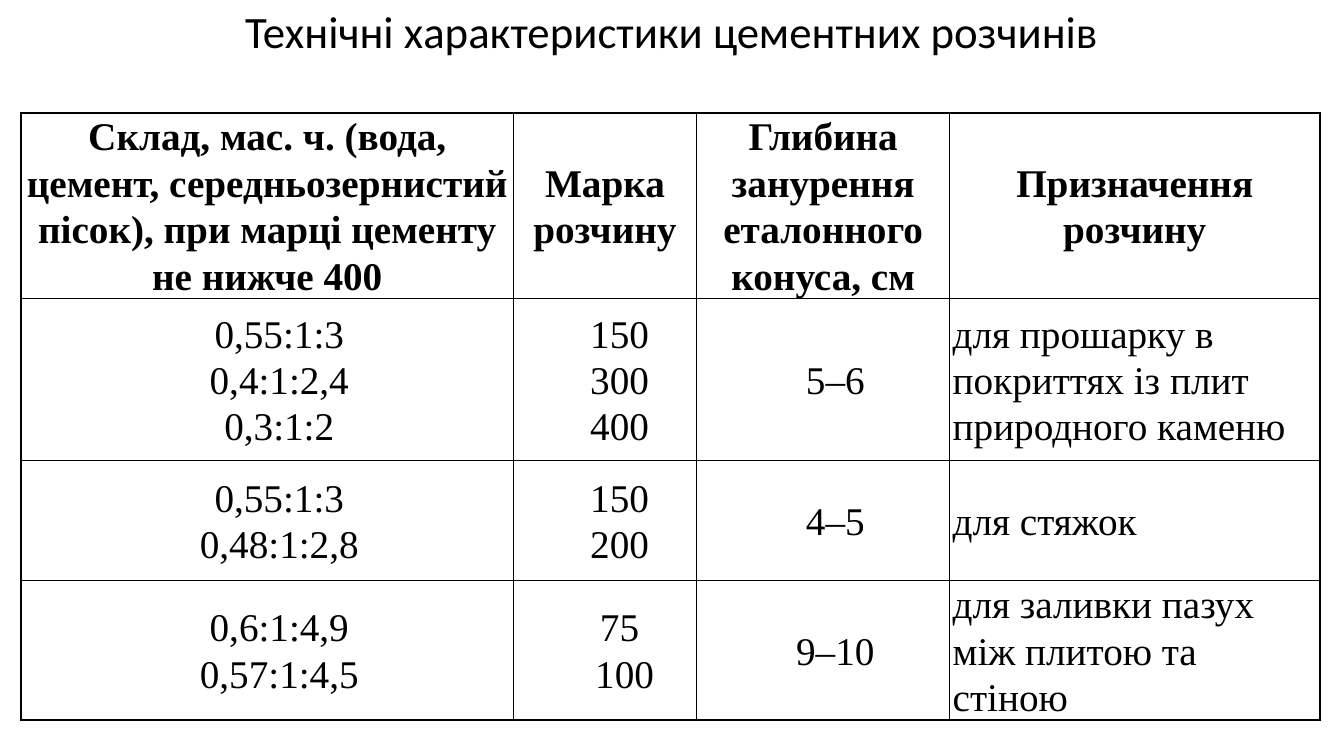
from dataclasses import dataclass

from lxml import etree
from pptx import Presentation
from pptx.dml.color import RGBColor
from pptx.enum.text import MSO_ANCHOR, MSO_AUTO_SIZE, PP_ALIGN
from pptx.oxml.ns import qn
from pptx.table import _Cell
from pptx.text.text import _Paragraph
from pptx.util import Inches, Pt

CENTER, LEFT = PP_ALIGN.CENTER, PP_ALIGN.LEFT
MIDDLE = MSO_ANCHOR.MIDDLE
NO_AUTOFIT = MSO_AUTO_SIZE.NONE
BLACK = RGBColor(0, 0, 0)
THICK, THIN = Pt(1.5), Pt(1)

TITLE = "Технічні характеристики цементних розчинів"
COLUMN_WIDTHS = (4.88, 1.82, 2.51, 3.67)
ROW_HEIGHTS = (1.41, 1.61, 1.19, 0.94)


@dataclass(frozen=True)
class Entry:
    """Lines of one table cell, with a first-line indent in inches for each."""
    lines: tuple[str, ...]
    indents: tuple[float, ...]
    align: PP_ALIGN = CENTER
    bold: bool = False


def heading(*lines: str) -> Entry:
    return Entry(lines, (0,) * len(lines), bold=True)


def ratios(*lines: str) -> Entry:
    return Entry(lines, (0.24,) * len(lines))


def grades(*lines: str) -> Entry:
    return Entry(lines, (0.29,) * len(lines))


def purpose(line: str) -> Entry:
    return Entry((line,), (0,), LEFT)


MORTARS = (
    (heading("Склад, мас. ч. (вода, цемент, середньозернистий пісок), "
             "при марці цементу не нижче 400"),
     heading("Марка розчину"),
     heading("Глибина занурення", "еталонного конуса, см"),
     heading("Призначення розчину")),
    (ratios("0,55:1:3", "0,4:1:2,4", "0,3:1:2"),
     grades("150", "300", "400"),
     ratios("5–6"),
     purpose("для прошарку в покриттях із плит природного каменю")),
    (ratios("0,55:1:3", "0,48:1:2,8"),
     grades("150", "200"),
     ratios("4–5"),
     purpose("для стяжок")),
    (ratios("0,6:1:4,9", "0,57:1:4,5"),
     Entry(("75", "100"), (0.29, 0.39)),
     ratios("9–10"),
     purpose("для заливки пазух між плитою та стіною")),
)


def add_text(paragraph: _Paragraph, text: str, font: str, size: int,
             bold: bool = False) -> None:
    run = paragraph.add_run()
    run.text = text
    run.font.name = font
    run.font.size = Pt(size)
    run.font.bold = bold
    run.font.color.rgb = BLACK


def set_borders(cell: _Cell, row: int, column: int) -> None:
    """Thick lines around the table and under its heading, thin ones elsewhere."""
    last_row, last_column = len(ROW_HEIGHTS) - 1, len(COLUMN_WIDTHS) - 1
    thick_sides = {
        "lnL": column == 0,
        "lnR": column == last_column,
        "lnT": row in (0, 1),
        "lnB": row in (0, last_row),
    }
    properties = cell._tc.get_or_add_tcPr()
    for side, is_thick in thick_sides.items():
        line = etree.SubElement(properties, qn(f"a:{side}"),
                                w=str(THICK if is_thick else THIN))
        fill = etree.SubElement(line, qn("a:solidFill"))
        etree.SubElement(fill, qn("a:srgbClr"), val=str(BLACK))


def fill_cell(cell: _Cell, entry: Entry) -> None:
    cell.margin_left = cell.margin_right = Inches(0.03)
    cell.margin_top = cell.margin_bottom = 0
    cell.vertical_anchor = MIDDLE
    frame = cell.text_frame
    for number, (text, indent) in enumerate(zip(entry.lines, entry.indents)):
        paragraph = frame.add_paragraph() if number else frame.paragraphs[0]
        paragraph.alignment = entry.align
        paragraph.line_spacing = 1.07
        if indent:
            properties = paragraph._p.get_or_add_pPr()
            properties.set("marL", "0")
            properties.set("indent", str(Inches(indent)))
        add_text(paragraph, text, "Times New Roman", 28, entry.bold)


def main() -> None:
    presentation = Presentation()
    presentation.slide_width = Inches(13.33)
    presentation.slide_height = Inches(7.5)
    slide = presentation.slides.add_slide(presentation.slide_layouts[5])

    title = slide.shapes.title
    title.left = title.top = 0
    title.width, title.height = Inches(13.33), Inches(0.67)
    title.text_frame.auto_size = NO_AUTOFIT
    title.text_frame.vertical_anchor = MIDDLE
    title_line = title.text_frame.paragraphs[0]
    title_line.alignment = CENTER
    title_line.line_spacing = 0.9
    add_text(title_line, TITLE, "Calibri", 32)

    mortar_frame = slide.shapes.add_table(
        len(ROW_HEIGHTS), len(COLUMN_WIDTHS),
        Inches(0.21), Inches(1.12), Inches(12.88), Inches(6.25))
    mortar_table = mortar_frame.table
    mortar_table.first_row = mortar_table.horz_banding = False
    for column, width in zip(mortar_table.columns, COLUMN_WIDTHS):
        column.width = Inches(width)
    for row, height in zip(mortar_table.rows, ROW_HEIGHTS):
        row.height = Inches(height)
    mortar_frame.height = Inches(6.25)

    for row_number, entries in enumerate(MORTARS):
        for column_number, entry in enumerate(entries):
            cell = mortar_table.cell(row_number, column_number)
            set_borders(cell, row_number, column_number)
            cell.fill.background()
            fill_cell(cell, entry)

    presentation.save("out.pptx")


if __name__ == "__main__":
    main()
